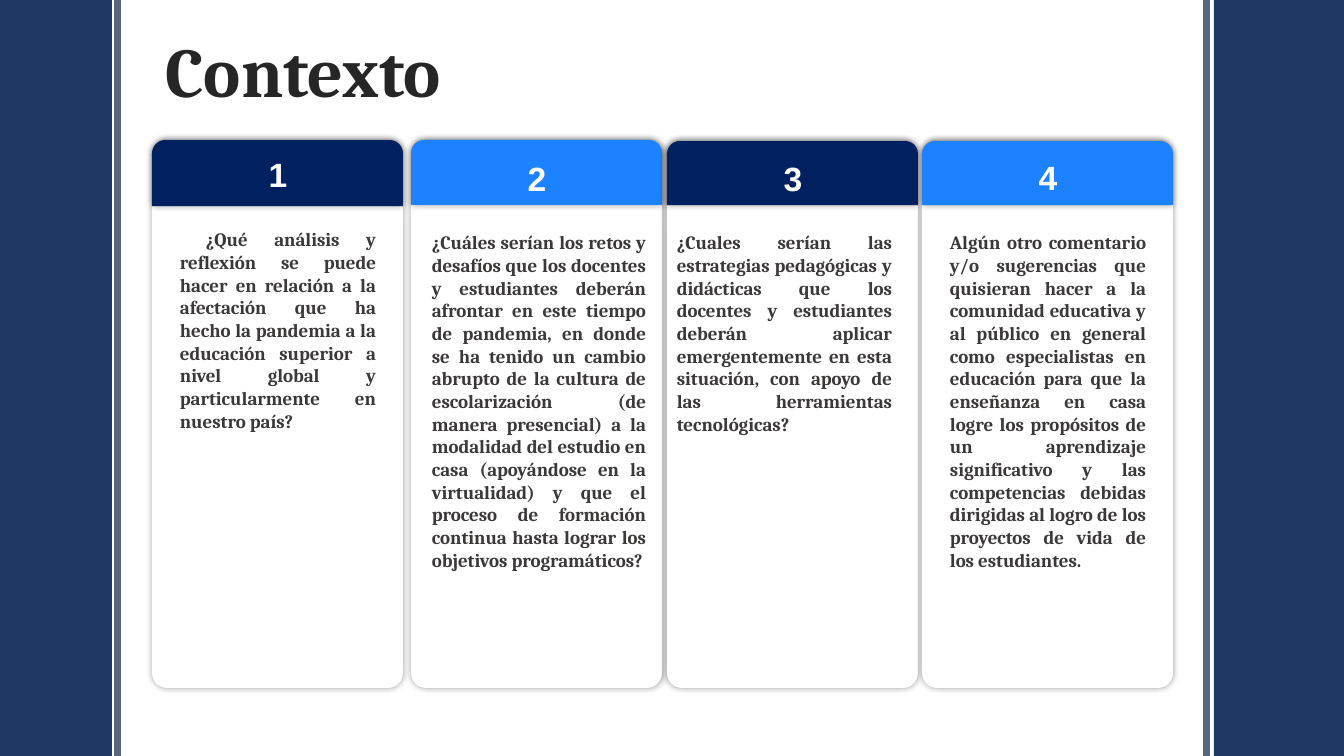
from lxml import etree
from pptx import Presentation
from pptx import util as u
from pptx.dml.color import RGBColor
from pptx.enum import shapes, text
from pptx.oxml.ns import qn

PX = 914400 / 100.8  # EMU in one px
COLORS = {"side": "203864", "rule": "57687C", "white": "FFFFFF", "navy": "002060",
          "blue": "1C82FF", "title": "262626", "body": "3B3838"}

# Card: left, head top, head height, head colour, number top, text box, indent, words
CARDS = [
    (152, 140, 66, "navy", 149, (170, 223, 216), 26,
     "¿Qué análisis y reflexión se puede hacer en relación a la afectación que ha hecho "
     "la pandemia a la educación superior a nivel global y particularmente en nuestro país?"),
    (411, 140, 65, "blue", 153, (422, 226, 234), 0,
     "¿Cuáles serían los retos y desafíos que los docentes y estudiantes deberán afrontar "
     "en este tiempo de pandemia, en donde se ha tenido un cambio abrupto de la cultura de "
     "escolarización (de manera presencial) a la modalidad del estudio en casa (apoyándose "
     "en la virtualidad) y que el proceso de formación continua hasta lograr los objetivos "
     "programáticos?"),
    (667, 141, 64, "navy", 153, (667, 226, 235), 0,
     "¿Cuales serían las estrategias pedagógicas y didácticas que los docentes y "
     "estudiantes deberán aplicar emergentemente en esta situación, con apoyo de las "
     "herramientas tecnológicas?"),
    (922, 141, 64, "blue", 152, (940, 226, 216), 0,
     "Algún otro comentario y/o sugerencias que quisieran hacer a la comunidad educativa "
     "y al público en general como especialistas en educación para que la enseñanza en "
     "casa logre los propósitos de un aprendizaje significativo y las competencias "
     "debidas dirigidas al logro de los proyectos de vida de los estudiantes."),
]


def px(n):
    return u.Emu(round(n * PX))


def rgb(name):
    return RGBColor.from_string(COLORS[name])


def add_block(slide, kind, box, color):
    shape = slide.shapes.add_shape(kind, *map(px, box))
    shape.shadow.inherit = False
    shape.fill.solid()
    shape.fill.fore_color.rgb = rgb(color)
    shape.line.fill.background()
    return shape


def add_glow(shape):
    """Soft black shadow on all sides."""
    effects = shape._element.spPr.find(qn("a:effectLst"))
    glow = etree.SubElement(effects, qn("a:outerShdw"), blurRad=str(u.Pt(5)),
                            dist="0", dir="0", algn="ctr", rotWithShape="0")
    black = etree.SubElement(glow, qn("a:srgbClr"), val="000000")
    etree.SubElement(black, qn("a:alpha"), val="40000")


def add_text(slide, box, words, font, size, color, align):
    frame = slide.shapes.add_textbox(*map(px, box)).text_frame
    frame.word_wrap = True
    para = frame.paragraphs[0]
    para.text = words
    para.alignment = align
    para.font.name = font
    para.font.size = u.Pt(size)
    para.font.bold = True
    para.font.color.rgb = rgb(color)
    return frame


def add_sides(slide, width, height):
    band, gap = 112, 6
    for left, mid in ((0, band + gap), (width - 130, width - 130 - 7)):
        wide = band if left == 0 else 130
        add_block(slide, shapes.MSO_SHAPE.RECTANGLE, (left, 0, wide, height), "side")
        rule = slide.shapes.add_connector(shapes.MSO_CONNECTOR.STRAIGHT,
                                          px(mid), 0, px(mid), px(height))
        rule.line.color.rgb = rgb("rule")
        rule.line.width = u.Pt(5)
        etree.SubElement(rule._element.spPr, qn("a:effectLst"))


def add_title(slide, box):
    frame = add_text(slide, box, "Contexto", "Cambria", 50, "title", text.PP_ALIGN.LEFT)
    frame.vertical_anchor = text.MSO_ANCHOR.MIDDLE
    para = frame.paragraphs[0]
    para.line_spacing = 0.8
    para.space_before = u.Pt(10)


def add_card(slide, box, number, head, color, label, body, indent, words):
    left, top, wide, high = box
    # Panel and its coloured head
    panel = add_block(slide, shapes.MSO_SHAPE.ROUNDED_RECTANGLE, box, "white")
    panel.adjustments[0] = 0.06
    add_glow(panel)
    cap = add_block(slide, shapes.MSO_SHAPE.ROUND_2_SAME_RECTANGLE,
                    (left, head[0], wide, head[1]), color)
    cap.adjustments[0] = 0.2
    add_glow(cap)
    # Number and question
    add_text(slide, (left + 66, label, 120, 50), str(number), "Arial", 24, "white",
             text.PP_ALIGN.CENTER)
    frame = add_text(slide, (*body, top + high - body[1]), words, "Cambria", 13.5, "body",
                     text.PP_ALIGN.JUSTIFY)
    if indent:
        frame.paragraphs[0]._p.get_or_add_pPr().set("indent", str(px(indent)))


def main():
    deck = Presentation()
    width, height = 1344, 756
    deck.slide_width, deck.slide_height = px(width), px(height)
    slide = deck.slides.add_slide(deck.slide_layouts[6])
    add_sides(slide, width, height)
    for number, (left, top, high, color, label, body, indent, words) in enumerate(CARDS, 1):
        add_card(slide, (left, 141, 251, 547), number, (top, high), color, label, body,
                 indent, words)
    add_title(slide, (156, 37, 759, 80))
    deck.save("out.pptx")


if __name__ == "__main__":
    main()
